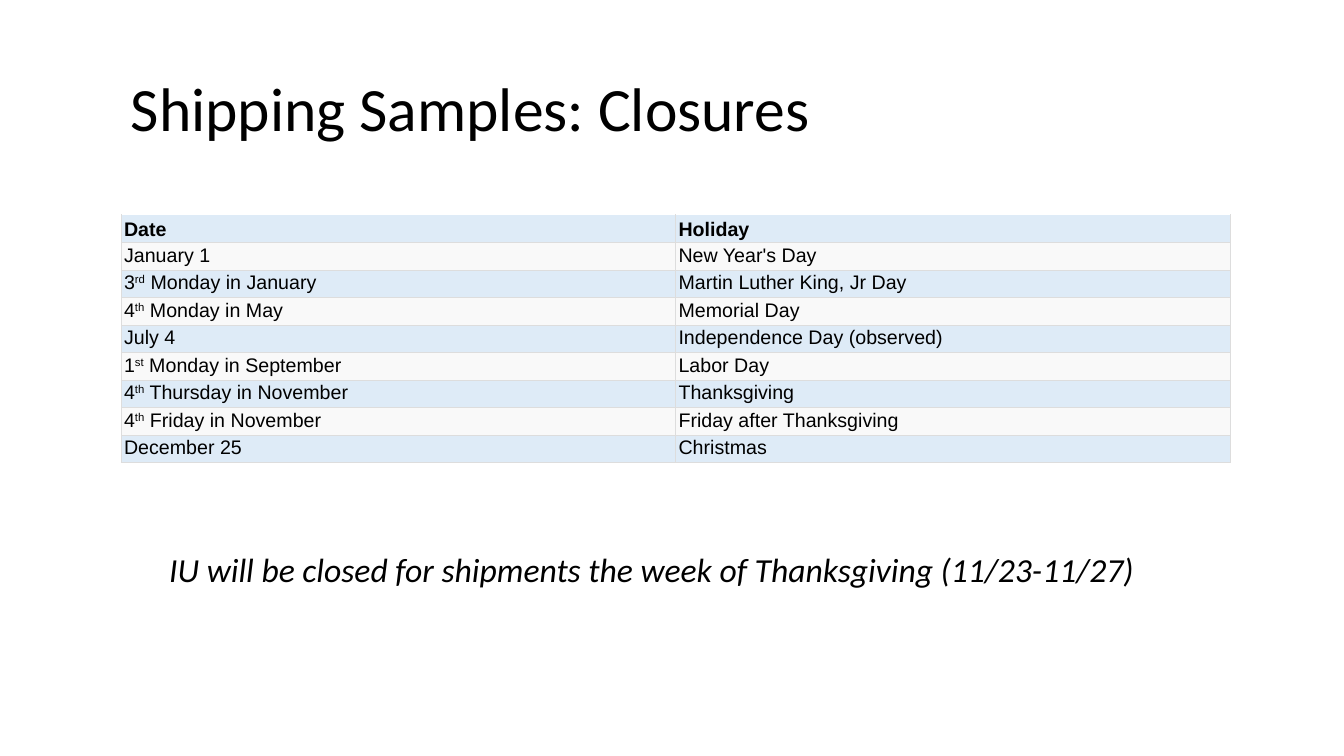
from lxml.etree import SubElement
from pptx import Presentation
from pptx.dml.color import RGBColor
from pptx.enum.text import MSO_ANCHOR
from pptx.oxml.ns import qn
from pptx.util import Inches, Pt

# Content: a date is a tuple of parts, the second one raised
TITLE = "Shipping Samples: Closures"
NOTE = "IU will be closed for shipments the week of Thanksgiving (11/23-11/27)"
ROWS = [
    (("Date",), "Holiday"),
    (("January 1",), "New Year's Day"),
    (("3", "rd", " Monday in January"), "Martin Luther King, Jr Day"),
    (("4", "th", " Monday in May"), "Memorial Day"),
    (("July 4",), "Independence Day (observed)"),
    (("1", "st", " Monday in September"), "Labor Day"),
    (("4", "th", " Thursday in November"), "Thanksgiving"),
    (("4", "th", " Friday in November"), "Friday after Thanksgiving"),
    (("December 25",), "Christmas"),
]

BLACK = RGBColor(0, 0, 0)
BLUE = RGBColor(0xDE, 0xEB, 0xF7)
PALE = RGBColor(0xF9, 0xF9, 0xF9)
EDGE = RGBColor(0xDD, 0xDD, 0xDD)


def style(run, name, size, bold=False, italic=False):
    font = run.font
    font.name, font.size = name, Pt(size)
    font.bold, font.italic = bold, italic
    font.color.rgb = BLACK


def add_text(slide, text, box, size, anchor, italic=False):
    frame = slide.shapes.add_textbox(*map(Inches, box)).text_frame
    frame.word_wrap = True
    frame.vertical_anchor = anchor
    frame.margin_left = frame.margin_right = Inches(0.1)
    frame.margin_top = frame.margin_bottom = Inches(0.1)
    para = frame.paragraphs[0]
    para.text = text
    para.line_spacing = 0.9
    style(para.runs[0], "Calibri", size, italic=italic)
    return para


def add_edges(cell, sides):
    props = cell._tc.get_or_add_tcPr()
    for side in sides:
        line = SubElement(props, qn("a:" + side), w=str(Pt(0.38)))
        fill = SubElement(line, qn("a:solidFill"))
        SubElement(fill, qn("a:srgbClr"), val=str(EDGE))


def fill_cell(cell, parts, row):
    head = row == 0
    cell.margin_left = cell.margin_right = Inches(0.03)
    cell.margin_top = cell.margin_bottom = Inches(0.02)
    cell.vertical_anchor = MSO_ANCHOR.BOTTOM if head else MSO_ANCHOR.TOP
    para = cell.text_frame.paragraphs[0]
    for i, part in enumerate(parts):
        run = para.add_run()
        run.text = part
        style(run, "Arial", 14, bold=head)
        if i == 1:
            run._r.get_or_add_rPr().set("baseline", "30000")
    # Borders come before the fill in the cell properties
    add_edges(cell, ["lnL", "lnR", "lnB"] if head else ["lnL", "lnR", "lnT", "lnB"])
    cell.fill.solid()
    cell.fill.fore_color.rgb = PALE if row % 2 else BLUE


def main():
    deck = Presentation()
    deck.slide_width, deck.slide_height = Inches(13.33), Inches(7.5)
    slide = deck.slides.add_slide(deck.slide_layouts[6])

    # Title
    add_text(slide, TITLE, (1.2, 0.31, 11, 1.59), 44, MSO_ANCHOR.MIDDLE)

    # Table of closures
    box = map(Inches, (1.2, 2.13, 11, 2.44))
    table = slide.shapes.add_table(len(ROWS), 2, *box).table
    for r, (date, day) in enumerate(ROWS):
        fill_cell(table.cell(r, 0), date, r)
        fill_cell(table.cell(r, 1), (day,), r)

    # Note below the table
    note = add_text(slide, NOTE, (1.26, 5.39, 10.88, 0.65), 24, MSO_ANCHOR.TOP, True)
    note._p.get_or_add_pPr().set("marL", str(Inches(0.32)))

    deck.save("out.pptx")


if __name__ == "__main__":
    main()
